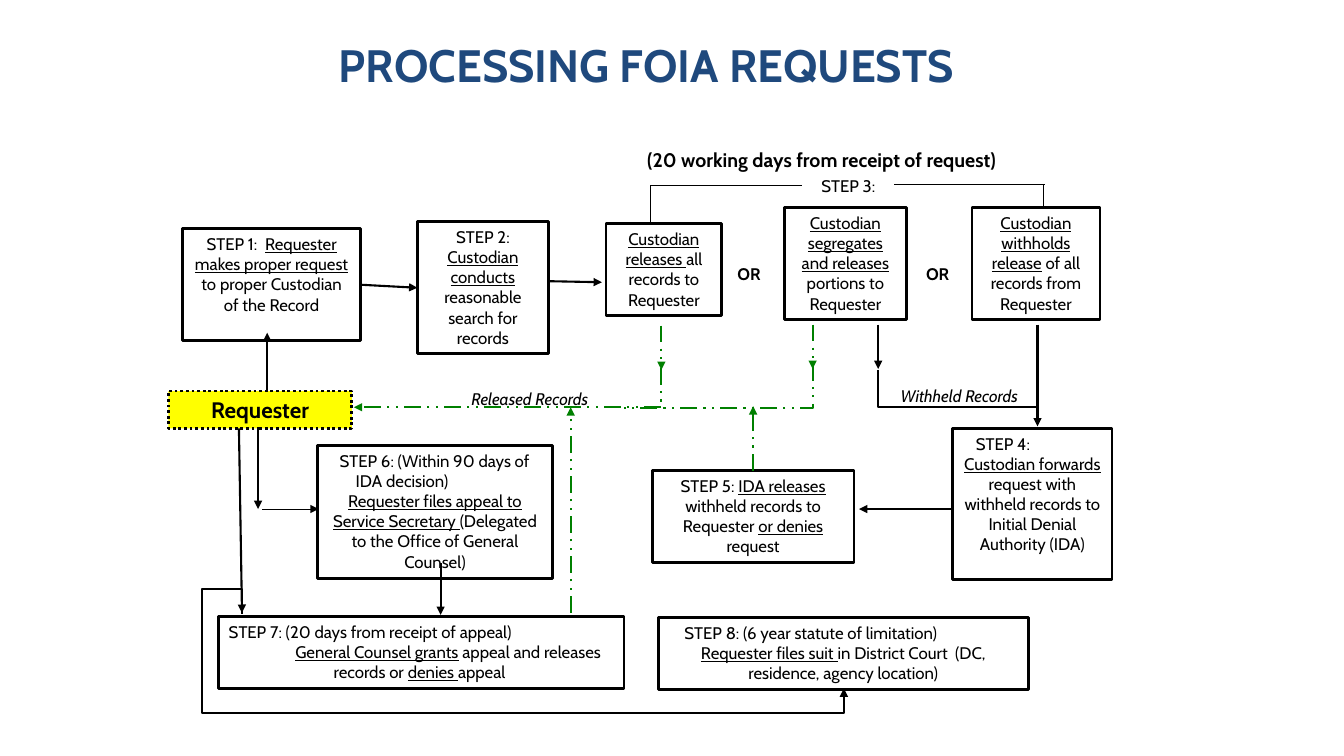
import pptx
import pptx.dml.color
import pptx.enum.dml
import pptx.enum.shapes
import pptx.enum.text
import pptx.oxml
import pptx.oxml.ns
import pptx.util

# The grid: each column and row is about a tenth of an inch
COLUMNS, ROWS = 133.3, 75
BLACK, GREEN, YELLOW, NAVY = "000000", "008000", "FFFF00", "1F497D"


def color(hex_string):
    return pptx.dml.color.RGBColor.from_string(hex_string)


class FlowSlide:
    font = "Cabin"
    size = 12

    def __init__(self, deck):
        self.column = deck.slide_width / COLUMNS
        self.row = deck.slide_height / ROWS
        self.slide = deck.slides.add_slide(deck.slide_layouts[5])

    def x(self, columns):
        return round(columns * self.column)

    def y(self, rows):
        return round(rows * self.row)

    def place(self, left, top, width, height):
        return self.x(left), self.y(top), self.x(width), self.y(height)

    def style(self, paragraph, size, ink=BLACK, bold=False, italic=False):
        font = paragraph.font
        font.name, font.size = self.font, pptx.util.Pt(size)
        font.bold, font.italic = bold, italic
        font.color.rgb = color(ink)

    def fill_text(self, frame, paragraphs, size=None, centred=True, **looks):
        """A paragraph is text, or (text, margin, indent) set from the left.
        Underscores enclose underlined words."""
        frame.word_wrap = True
        frame.vertical_anchor = pptx.enum.text.MSO_ANCHOR.TOP
        align = pptx.enum.text.PP_ALIGN
        for index, entry in enumerate(paragraphs):
            paragraph = frame.paragraphs[0] if index == 0 else frame.add_paragraph()
            paragraph.alignment = align.CENTER if centred else align.LEFT
            text = entry
            if isinstance(entry, tuple):
                text, margin, indent = entry
                paragraph.alignment = align.LEFT
                properties = paragraph._p.get_or_add_pPr()
                properties.set("marL", str(self.x(margin)))
                properties.set("indent", str(self.x(indent)))
            self.style(paragraph, size or self.size, **looks)
            for part, words in enumerate(text.split("_")):
                if words:
                    run = paragraph.add_run()
                    run.text = words
                    if part % 2:
                        run.font.underline = True

    def title(self, text, *area):
        heading = self.slide.shapes.title
        heading.left, heading.top, heading.width, heading.height = self.place(*area)
        self.fill_text(heading.text_frame, [text], 32.4, ink=NAVY, bold=True)
        heading.text_frame.vertical_anchor = pptx.enum.text.MSO_ANCHOR.MIDDLE
        heading.text_frame.paragraphs[0].line_spacing = 0.85

    def box(self, area, *paragraphs, fill=None, dash=None, **looks):
        box = self.slide.shapes.add_shape(
            pptx.enum.shapes.MSO_SHAPE.RECTANGLE, *self.place(*area))
        box.shadow.inherit = False
        if fill:
            box.fill.solid()
            box.fill.fore_color.rgb = color(fill)
        else:
            box.fill.background()
        self.stroke(box.line, BLACK, 2, dash)
        self.fill_text(box.text_frame, paragraphs, **looks)
        return box

    def label(self, area, text, **looks):
        label = self.slide.shapes.add_textbox(*self.place(*area))
        self.fill_text(label.text_frame, [text], **looks)

    def stroke(self, line, ink, weight, dash=None):
        line.color.rgb = color(ink)
        line.width = pptx.util.Pt(weight)
        if dash:
            line.dash_style = dash

    def finish(self, connector, ink, weight, arrow):
        dash = pptx.enum.dml.MSO_LINE.DASH_DOT_DOT if ink == GREEN else None
        self.stroke(connector.line, ink, weight, dash)
        properties = connector.element.spPr
        if arrow:
            head = pptx.oxml.parse_xml(
                '<a:tailEnd %s type="triangle"/>' % pptx.oxml.ns.nsdecls("a"))
            properties.find(pptx.oxml.ns.qn("a:ln")).append(head)
        properties.append(pptx.oxml.parse_xml(
            "<a:effectLst %s/>" % pptx.oxml.ns.nsdecls("a")))

    def line(self, start, end, ink=BLACK, weight=1.5, arrow=True,
             source=None, target=None):
        """source and target are (box, side) pairs to join."""
        connector = self.slide.shapes.add_connector(
            pptx.enum.shapes.MSO_CONNECTOR.STRAIGHT,
            self.x(start[0]), self.y(start[1]), self.x(end[0]), self.y(end[1]))
        if source:
            connector.begin_connect(*source)
        if target:
            connector.end_connect(*target)
        self.finish(connector, ink, weight, arrow)

    def elbow(self, start, end, ink=BLACK, arrow=True, bends=()):
        """Leaves its start vertically, so the preset is turned a quarter."""
        rightward = end[0] > start[0]
        middle_x, middle_y = (self.x(start[0] + end[0]) // 2,
                              self.y(start[1] + end[1]) // 2)
        half_run = self.y(end[1] - start[1]) // 2
        half_rise = self.x(abs(end[0] - start[0])) // 2
        side = half_run if rightward else -half_run
        connector = self.slide.shapes.add_connector(
            pptx.enum.shapes.MSO_CONNECTOR.ELBOW,
            middle_x + side, middle_y - half_rise,
            middle_x - side, middle_y + half_rise)
        properties = connector.element.spPr
        properties.find(pptx.oxml.ns.qn("a:xfrm")).set(
            "rot", str((270 if rightward else 90) * 60000))
        geometry = properties.find(pptx.oxml.ns.qn("a:prstGeom"))
        geometry.set("prst", "bentConnector%d" % (len(bends) + 2))
        for number, share in enumerate(bends, 1):
            geometry[0].append(pptx.oxml.parse_xml(
                '<a:gd %s name="adj%d" fmla="val %d"/>'
                % (pptx.oxml.ns.nsdecls("a"), number, round(share * 100000))))
        self.finish(connector, ink, 1.5, arrow)


def main():
    deck = pptx.Presentation()
    deck.slide_width = pptx.util.Inches(13.33)
    deck.slide_height = pptx.util.Inches(7.5)
    flow = FlowSlide(deck)
    flow.title("PROCESSING FOIA REQUESTS", 19.1, 3.9, 90, 5.8)

    # Requester and the request steps
    flow.box((16.7, 38.8, 18.2, 3.7), "Requester", fill=YELLOW, size=16, bold=True,
             dash=pptx.enum.dml.MSO_LINE.ROUND_DOT)
    request = flow.box((18.1, 22.7, 17.7, 11.1), "STEP 1:  _Requester makes proper "
                       "request_ to proper Custodian of the Record")
    search = flow.box((41.4, 22, 13, 13.1),
                      "STEP 2: _Custodian conducts_ reasonable search for records")

    # Step 3: three outcomes
    flow.label((63.2, 14.2, 41.9, 3.4), "(20 working days from receipt of request)",
               size=14, bold=True, centred=False)
    flow.label((64.8, 16.9, 38.7, 3), "STEP 3:")
    flow.box((60.1, 22.2, 11.5, 9.1), "_Custodian releases _all records to Requester")
    flow.box((77.8, 20.6, 12.1, 11.1),
             "_Custodian segregates and releases_ portions to Requester")
    flow.box((96.4, 20.6, 12.7, 11.1),
             "_Custodian withholds release_ of all records from Requester")
    for left in (71.5, 90.2):
        flow.label((left, 25.7, 5.6, 3), "OR", bold=True)
    flow.label((84.9, 37.8, 20.5, 3), "Withheld Records", italic=True)
    flow.label((35.8, 38.1, 33.5, 3), "Released Records", italic=True)

    # Steps 4 to 8: denial, appeal and suit
    flow.box((94.5, 42.5, 15.8, 15), ("STEP 4:", 1.3, 0),
             "_Custodian forwards_ request with withheld records to "
             "Initial Denial Authority (IDA)")
    denial = flow.box((64.7, 46.7, 20, 9.1), "STEP 5: _IDA releases_ withheld records "
                      "to Requester _or denies_ request")
    flow.box((31.5, 44.2, 23.3, 13.2),
             ("STEP 6: (Within 90 days of IDA decision)", 2.8, -1.6),
             "_Requester files appeal to Service Secretary _"
             "(Delegated to the Office of General Counsel)")
    flow.box((21.7, 61.2, 40.2, 7.1), ("STEP 7: (20 days from receipt of appeal)", 0, 0),
             ("_General Counsel grants_ appeal and releases records or "
              "_denies _appeal", 10.4, -3.8))
    flow.box((65.3, 61.3, 36.7, 7.1), ("STEP 8: (6 year statute of limitation)", 1.6, 0),
             "_Requester files suit _in District Court  (DC, residence, agency location)")

    # Bracket over step 3
    for start, end in (((79.5, 18.4), (64.6, 18.4)), ((103.6, 18.3), (88.7, 18.3)),
                       ((103.5, 18.3), (103.5, 20.5)), ((64.5, 18.4), (64.5, 22))):
        flow.line(start, end, weight=0.75, arrow=False)

    # Path of the request
    flow.line((35.8, 28.3), (41.4, 28.6), source=(request, 3), target=(search, 1))
    for start, end in (((54.5, 27.9), (59.7, 28)), ((26.5, 38.8), (26.5, 33)),
                       ((102.9, 32.2), (102.9, 42.3)), ((87.1, 32.2), (87.1, 36.6)),
                       ((94.5, 50.5), (85.2, 50.5)), ((25.6, 42.5), (25.6, 50.5)),
                       ((23.7, 42.5), (24, 60.8)), ((43.7, 55.9), (43.7, 61))):
        flow.line(start, end)
    flow.line((26, 50.5), (31.6, 50.5), weight=0.75)
    flow.elbow((87.1, 36.7), (102.9, 40.4), arrow=False)
    flow.elbow((24, 60.9), (83.7, 68.3), bends=(-0.335, -0.067, 1.335))

    # Path of the released records
    for start, end in (((80.6, 32.2), (80.6, 36.6)), ((65.6, 32.3), (65.6, 36.7)),
                       ((56.6, 60.8), (56.6, 40.4))):
        flow.line(start, end, GREEN)
    flow.line((74.7, 46.7), (74.7, 40.3), GREEN, source=(denial, 0))
    flow.elbow((65.6, 36.5), (35.1, 40.4), GREEN)
    flow.elbow((80.6, 36.1), (61.9, 40.5), GREEN, arrow=False)

    deck.save("out.pptx")


if __name__ == "__main__":
    main()
